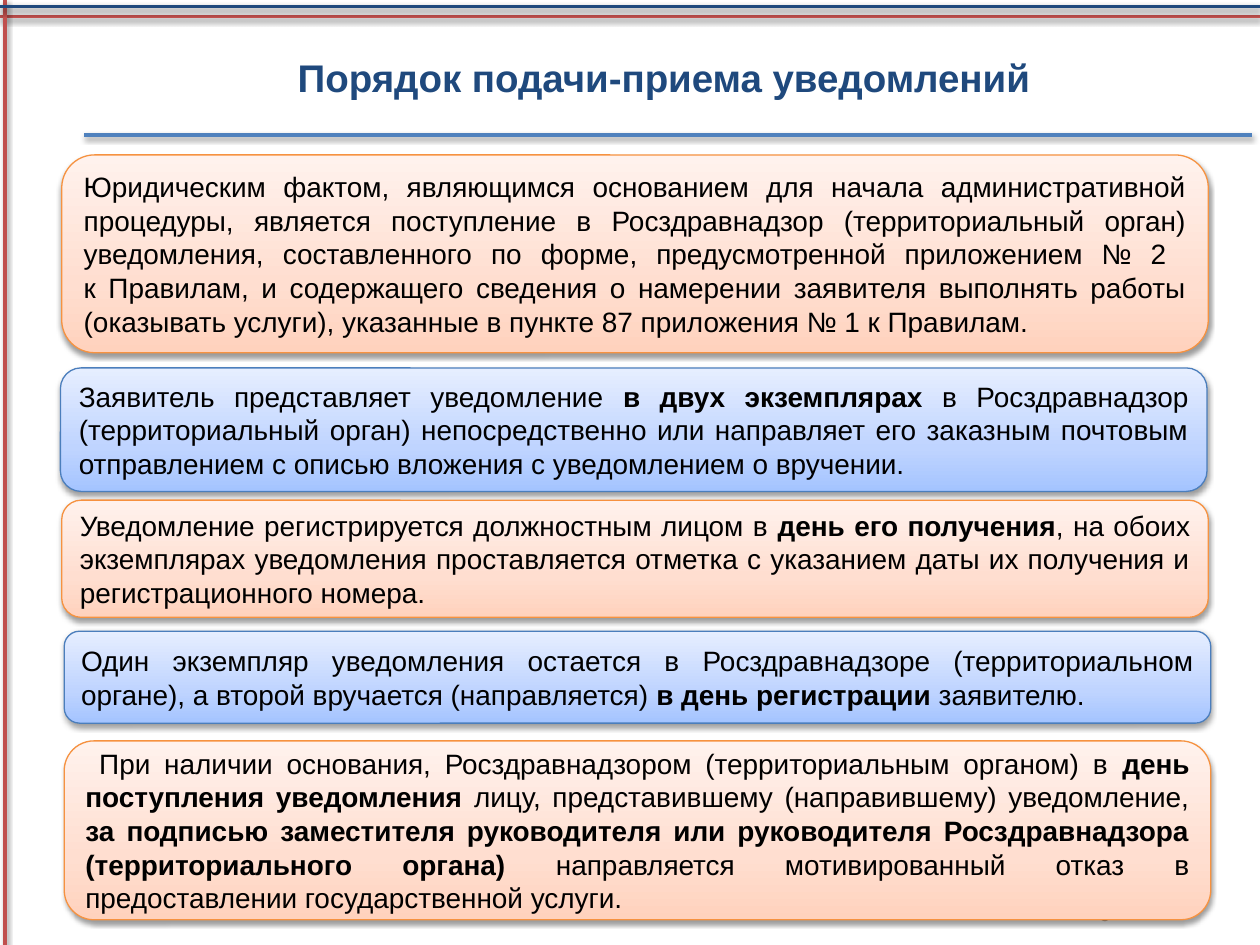
from copy import deepcopy
from dataclasses import dataclass

from lxml import etree
from pptx import Presentation
from pptx.dml.color import RGBColor
from pptx.enum.shapes import MSO_CONNECTOR, MSO_SHAPE
from pptx.enum.text import MSO_ANCHOR, PP_ALIGN
from pptx.oxml import parse_xml
from pptx.oxml.ns import nsdecls, qn
from pptx.util import Inches, Pt

LINE = MSO_CONNECTOR.STRAIGHT
ROUNDED = MSO_SHAPE.ROUNDED_RECTANGLE
MIDDLE = MSO_ANCHOR.MIDDLE
CENTER, RIGHT, JUSTIFY = PP_ALIGN.CENTER, PP_ALIGN.RIGHT, PP_ALIGN.JUSTIFY


@dataclass(frozen=True)
class Theme:
    font: str = "Arial"
    number_font: str = "Calibri"
    title_size: float = 22
    body_size: float = 16
    number_size: float = 12
    rule_width: float = 2
    border_width: float = 0.75
    navy: str = "1F497D"
    red: str = "C0504D"
    blue: str = "4F81BD"
    gray: str = "8C8C8C"
    black: str = "000000"


THEME = Theme()
WIDTH, HEIGHT = 10, 7.5
BOX_WIDTH = 9.1
STOPS = (0, 0.35, 1)
PEACH = {"stops": ("FFD2BD", "FFDED0", "FFF2ED"), "border": "F69240"}
SKY = {"stops": ("A4C4FF", "BFD4FF", "E6EEFF"), "border": "4B7EBC"}

TITLE = "Порядок подачи-приема уведомлений"
PAGE_NUMBER = "8"

# Start, end and colour of each rule
FRAME_RULES = [
    ((WIDTH, 0.13), (0, 0.13), THEME.red),
    ((0.04, 0), (0.04, HEIGHT), THEME.red),
    ((0, 0.05), (WIDTH, 0.05), THEME.navy),
]
TITLE_RULE = ((0.67, 1.07), (9.94, 1.07), THEME.blue)

# Left, top and height of each step, then its text: every second piece is bold
STEPS = [
    (0.49, 1.23, 1.57, [
        "Юридическим фактом, являющимся основанием для начала административной "
        "процедуры, является поступление в Росздравнадзор (территориальный орган) "
        "уведомления, составленного по форме, предусмотренной приложением № 2 \n"
        "к Правилам, и содержащего сведения о намерении заявителя выполнять работы "
        "(оказывать услуги), указанные в пункте 87 приложения № 1 к Правилам.",
    ]),
    (0.48, 2.92, 0.98, [
        "Заявитель представляет уведомление ",
        "в двух экземплярах",
        " в Росздравнадзор (территориальный орган) непосредственно или направляет его "
        "заказным почтовым отправлением с описью вложения с уведомлением о вручении.",
    ]),
    (0.49, 3.97, 0.93, [
        "Уведомление регистрируется должностным лицом в ",
        "день его получения",
        ", на обоих экземплярах уведомления проставляется отметка с указанием даты "
        "их получения и регистрационного номера.",
    ]),
    (0.51, 5.01, 0.73, [
        "Один экземпляр уведомления остается в Росздравнадзоре (территориальном "
        "органе), а второй вручается (направляется) ",
        "в день регистрации",
        " заявителю.",
    ]),
    (0.51, 5.88, 1.42, [
        " При наличии основания, Росздравнадзором (территориальным органом) в ",
        "день поступления уведомления",
        " лицу, представившему (направившему) уведомление, ",
        "за подписью заместителя руководителя или руководителя Росздравнадзора "
        "(территориального органа) ",
        "направляется мотивированный отказ в предоставлении государственной услуги.",
    ]),
]


def color(value):
    return RGBColor.from_string(value)


def add_shadow(shape):
    properties = shape._element.spPr
    effects = properties.find(qn("a:effectLst"))
    if effects is None:
        effects = etree.SubElement(properties, qn("a:effectLst"))
    effects.append(parse_xml(
        f'<a:outerShdw {nsdecls("a")} blurRad="40000" dist="20000" dir="5400000" '
        'rotWithShape="0"><a:srgbClr val="000000"><a:alpha val="38000"/></a:srgbClr>'
        '</a:outerShdw>'))


def add_rule(page, start, end, tint):
    rule = page.shapes.add_connector(LINE, *map(Inches, start + end))
    rule.line.color.rgb = color(tint)
    rule.line.width = Pt(THEME.rule_width)
    add_shadow(rule)


def style_paragraph(para, align, name, size, tint, bold=None):
    para.alignment = align
    para.font.name = name
    para.font.size = Pt(size)
    para.font.color.rgb = color(tint)
    para.font.bold = bold


def add_label(page, text, area, *style):
    box = page.shapes.add_textbox(*map(Inches, area))
    frame = box.text_frame
    frame.word_wrap = True
    frame.vertical_anchor = MIDDLE
    frame.text = text
    style_paragraph(frame.paragraphs[0], *style)


def fill_gradient(shape, colors):
    """Fill the shape from its bottom edge upwards."""
    shape.fill.gradient()
    shape.fill.gradient_angle = 90
    first = shape._element.spPr.find(".//" + qn("a:gs"))
    first.addnext(deepcopy(first))
    for stop, position, tint in zip(shape.fill.gradient_stops, STOPS, colors):
        stop.position = position
        stop.color.rgb = color(tint)


def add_step(page, left, top, height, pieces, palette):
    box = page.shapes.add_shape(ROUNDED, *map(Inches, (left, top, BOX_WIDTH, height)))
    fill_gradient(box, palette["stops"])
    box.line.color.rgb = color(palette["border"])
    box.line.width = Pt(THEME.border_width)
    box.shadow.inherit = False
    add_shadow(box)
    frame = box.text_frame
    frame.word_wrap = True
    frame.vertical_anchor = MIDDLE
    para = frame.paragraphs[0]
    style_paragraph(para, JUSTIFY, THEME.font, THEME.body_size, THEME.black)
    for index, piece in enumerate(pieces):
        for row, line in enumerate(piece.split("\n")):
            if row:
                para.add_line_break()
            span = para.add_run()
            span.text = line
            if index % 2:
                span.font.bold = True


def main():
    deck = Presentation()
    deck.slide_width, deck.slide_height = Inches(WIDTH), Inches(HEIGHT)
    page = deck.slides.add_slide(deck.slide_layouts[6])
    for rule in FRAME_RULES:
        add_rule(page, *rule)
    add_label(page, PAGE_NUMBER, (6.58, 7.05, 2.33, 0.4),
              RIGHT, THEME.number_font, THEME.number_size, THEME.gray)
    add_label(page, TITLE, (0.82, 0.19, 8.9, 0.84),
              CENTER, THEME.font, THEME.title_size, THEME.navy, True)
    add_rule(page, *TITLE_RULE)
    for index, step in enumerate(STEPS):
        add_step(page, *step, SKY if index % 2 else PEACH)
    deck.save("out.pptx")


if __name__ == "__main__":
    main()
